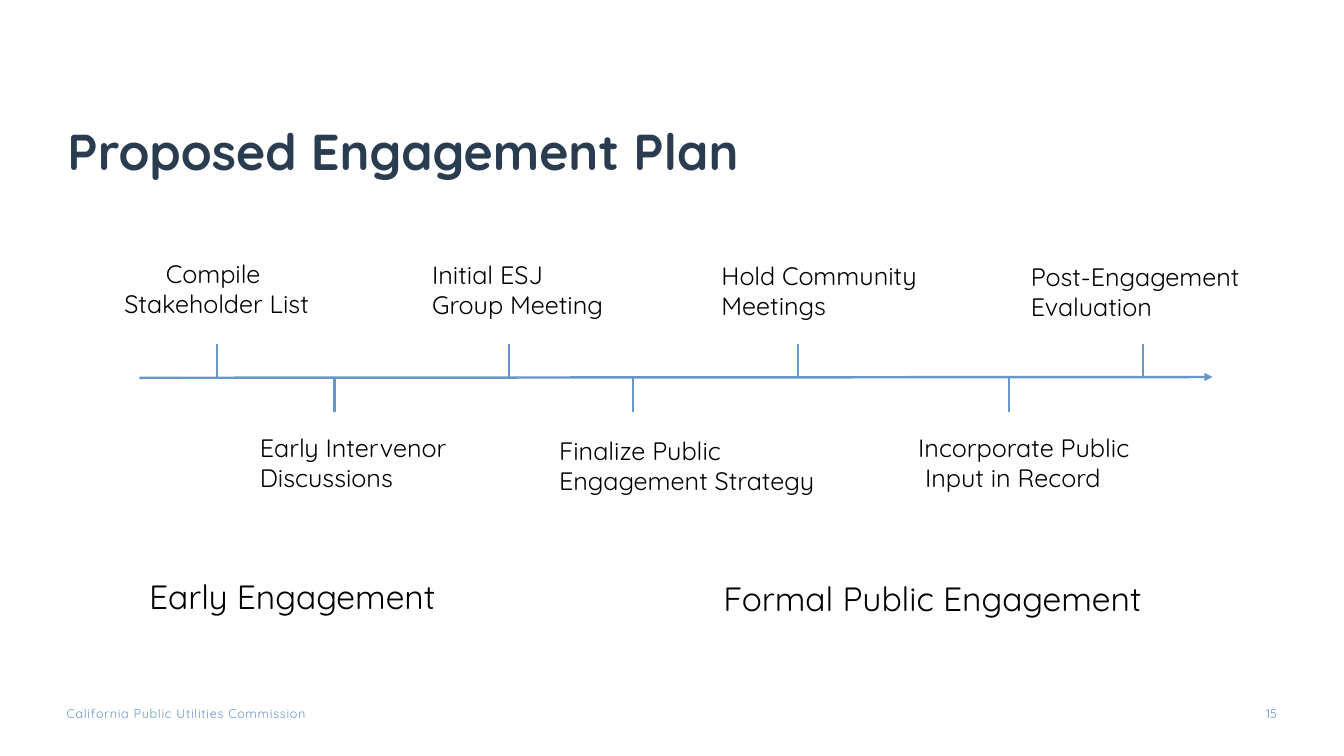
from lxml import etree
from pptx import Presentation
from pptx import util as u
from pptx.dml import color
from pptx.enum import shapes, text
from pptx.oxml import ns

FACE = "Quicksand"
BLUE, NAVY, BLACK = "6996C9", "2A3C50", "000000"
LEFT, MID, RIGHT = text.PP_ALIGN.LEFT, text.PP_ALIGN.CENTER, text.PP_ALIGN.RIGHT

# Label lines, label left, top and width, tick position, alignment;
# lengths in cm from the timeline's corner, steps alternate above and below
STEPS = [
    (["Compile ", "Stakeholder List"], 0, 0, 5.28, 2.64, MID),
    (["Early Intervenor", "Discussions"], 3.48, 4.39, 5.28, 5.61, LEFT),
    (["Initial ESJ", "Group Meeting"], 7.82, 0.02, 5.28, 10.01, LEFT),
    (["Finalize Public", "Engagement Strategy"], 11.02, 4.47, 7.34, 13.13, LEFT),
    (["Hold Community", "Meetings"], 15.11, 0.05, 5.92, 17.3, LEFT),
    (["Incorporate Public", " Input in Record"], 20.07, 4.39, 6.25, 22.61, LEFT),
    (["Post-Engagement", "Evaluation"], 22.91, 0.07, 6.25, 25.98, LEFT),
]


def rgb(code):
    return color.RGBColor.from_string(code)


def write(slide, box, lines, size, tint, align=LEFT, pad=None, wrap=False):
    """Place one text box; pad gives left, top, right, bottom in cm."""
    shape = slide.shapes.add_textbox(*map(u.Cm, box))
    frame = shape.text_frame
    frame.word_wrap = wrap
    if pad:
        (frame.margin_left, frame.margin_top,
         frame.margin_right, frame.margin_bottom) = map(u.Cm, pad)
    frame.text = "\n".join(lines)
    for para in frame.paragraphs:
        para.alignment = align
        para.font.name = FACE
        para.font.size = u.Pt(size)
        para.font.color.rgb = rgb(tint)
    return frame


def rule(slide, x1, y1, x2, y2, width):
    line = slide.shapes.add_connector(
        shapes.MSO_CONNECTOR.STRAIGHT, *map(u.Cm, (x1, y1, x2, y2)))
    line.line.color.rgb = rgb(BLUE)
    line.line.width = u.Pt(width)
    etree.SubElement(line._element.spPr, ns.qn("a:effectLst"))
    return line


def title(slide, box):
    frame = write(slide, box, ["Proposed Engagement Plan"], 36, NAVY,
                  pad=(0, 0.13, 0.25, 0.13), wrap=True)
    frame.vertical_anchor = text.MSO_ANCHOR.BOTTOM
    para = frame.paragraphs[0]
    para.line_spacing = 0.9
    para.font.bold = True


def timeline(slide, box):
    left, top, width, height = box
    axis = top + 3.14
    tick = 0.86

    # Arrow
    arrow = rule(slide, left + 0.69, axis, left + width, axis - 0.02, 1.75)
    etree.SubElement(arrow.line._get_or_add_ln(), ns.qn("a:tailEnd"),
                     type="triangle")

    # Steps
    for i, (lines, x, y, wide, mark, align) in enumerate(STEPS):
        write(slide, (left + x, top + y, wide, 1.8), lines, 18, BLACK, align)
        start = axis if i % 2 else axis - tick
        rule(slide, left + mark, start, left + mark, start + tick, 1.5)


def phases(slide, box):
    left, top, width, height = box
    write(slide, (left, top, 8.1, height), ["Early Engagement"], 24, BLACK)
    write(slide, (left + width - 11.71, top + 0.03, 11.71, height),
          ["Formal Public Engagement"], 24, BLACK)


def footer(slide, box):
    left, top, width, height = box
    none = (0, 0, 0, 0)
    frame = write(slide, (left, top, 8.15, height),
                  ["California Public Utilities Commission"], 9, BLUE,
                  pad=none, wrap=True)
    run = frame.paragraphs[0].runs[0]
    run.font._element.set("spc", "50")
    write(slide, (left + width - 1.07, top, 1.07, height), ["15"], 9, BLUE,
          RIGHT, none, True)


def main():
    deck = Presentation()
    deck.slide_width, deck.slide_height = u.Cm(33.87), u.Cm(19.05)
    slide = deck.slides.add_slide(deck.slide_layouts[6])
    title(slide, (1.7, 1.02, 30.48, 3.68))
    timeline(slide, (2.82, 6.38, 27.74, 6.27))
    phases(slide, (3.51, 14.4, 26.18, 1.27))
    footer(slide, (1.68, 17.78, 30.5, 0.4))
    deck.save("out.pptx")


if __name__ == "__main__":
    main()
